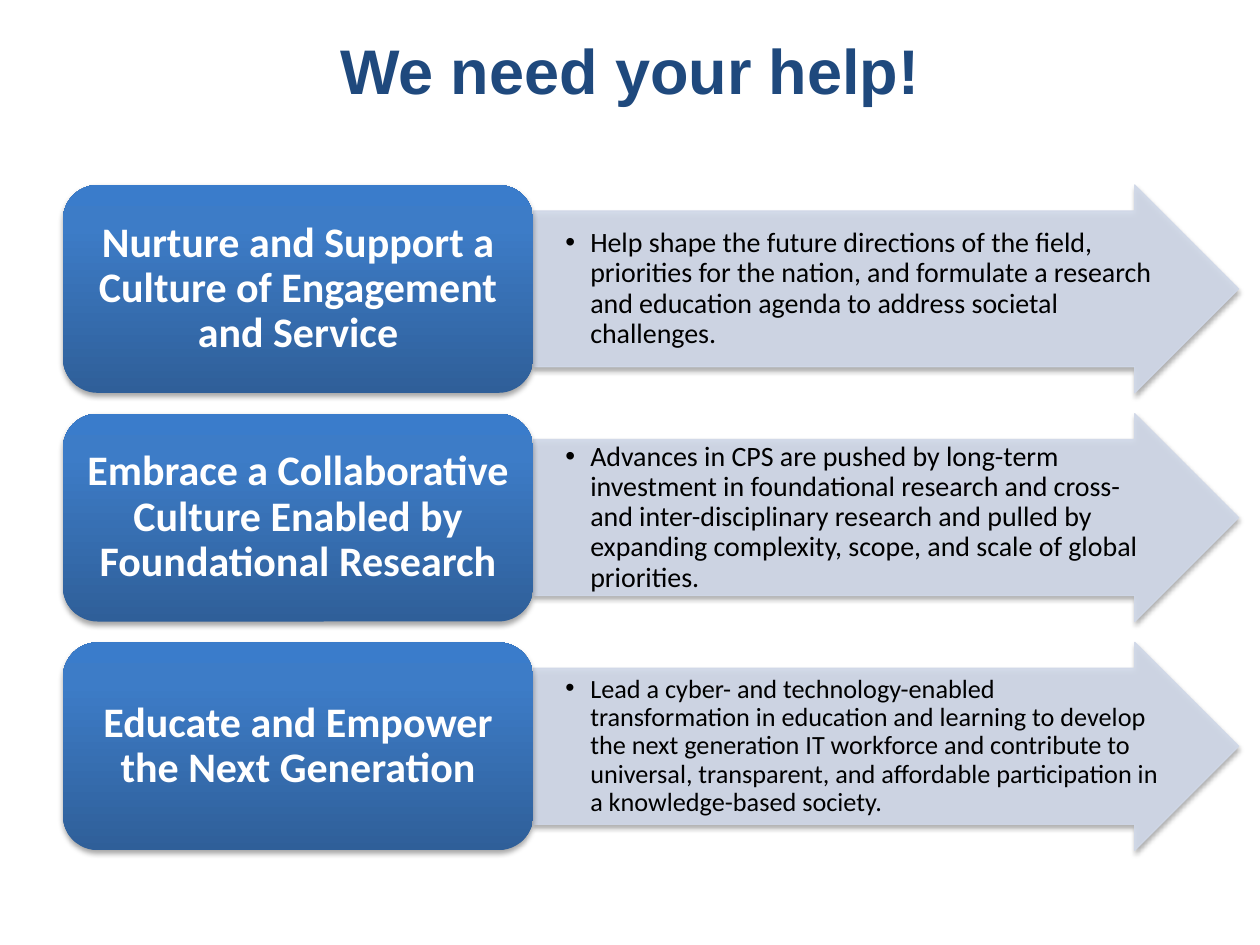
from copy import deepcopy

from pptx import Presentation
from pptx.dml.color import RGBColor
from pptx.enum.shapes import MSO_SHAPE
from pptx.enum.text import MSO_ANCHOR, PP_ALIGN
from pptx.oxml import parse_xml
from pptx.oxml.ns import nsdecls, qn
from pptx.util import Cm, Pt

NAVY = RGBColor(0x1F, 0x49, 0x7D)
PALE = RGBColor(0xD0, 0xD8, 0xE8)
WHITE = RGBColor(0xFF, 0xFF, 0xFF)
BLACK = RGBColor(0x00, 0x00, 0x00)
BLUE_STOPS = [
    (0, RGBColor(0x2F, 0x5F, 0x99)),
    (0.8, RGBColor(0x3D, 0x7C, 0xC7)),
    (1, RGBColor(0x3A, 0x7C, 0xCB)),
]

TITLE_FONT = {"name": "Arial", "size": Pt(36), "bold": True}
GOAL_FONT = {"name": "Calibri", "size": Pt(24), "bold": True}
DETAIL_FONT = {"name": "Calibri", "bold": False}

# Goal, detail, detail size in points
ROWS = [
    ("Nurture and Support a Culture of Engagement and Service",
     "Help shape the future directions of the field, priorities for the nation, "
     "and formulate a research and education agenda to address societal challenges.", 16),
    ("Embrace a Collaborative Culture Enabled by Foundational Research",
     "Advances in CPS are pushed by long-term investment in foundational research "
     "and cross- and inter-disciplinary research and pulled by expanding complexity, "
     "scope, and scale of global priorities.", 16),
    ("Educate and Empower the Next Generation",
     "Lead a cyber- and technology-enabled transformation in education and learning "
     "to develop the next generation IT workforce and contribute to universal, "
     "transparent, and affordable participation in a knowledge-based society.", 15),
]


def write(sp, text, color, font, align, spacing=1.0):
    tf = sp.text_frame
    tf.word_wrap = True
    tf.vertical_anchor = MSO_ANCHOR.MIDDLE
    p = tf.paragraphs[0]
    p.alignment = align
    p.line_spacing = spacing
    r = p.add_run()
    r.text = text
    for key, value in font.items():
        setattr(r.font, key, value)
    r.font.color.rgb = color
    return p


def add_shadow(sp):
    sp.shadow.inherit = False
    effects = sp._element.spPr.find(qn("a:effectLst"))
    effects.append(parse_xml(
        f'<a:outerShdw {nsdecls("a")} blurRad="{Pt(3.1)}" dist="{Pt(1.8)}" '
        'dir="5400000" rotWithShape="0"><a:srgbClr val="000000">'
        '<a:alpha val="35000"/></a:srgbClr></a:outerShdw>'))


def add_title(s, left, top, width, height):
    sp = s.shapes.add_textbox(left, top, width, height)
    write(sp, "We need your help!", NAVY, TITLE_FONT, PP_ALIGN.CENTER)


def add_arrow(s, left, top, width, height, text, size):
    sp = s.shapes.add_shape(MSO_SHAPE.RIGHT_ARROW, left, top, width, height)
    sp.adjustments[0] = 0.75
    sp.fill.solid()
    sp.fill.fore_color.rgb = PALE
    sp.line.color.rgb = PALE
    sp.line.width = Pt(0.75)
    # 90 % opacity on fill and outline
    for clr in sp._element.spPr.iter(qn("a:srgbClr")):
        clr.append(parse_xml(f'<a:alpha {nsdecls("a")} val="90000"/>'))
    add_shadow(sp)

    for side in ("left", "top", "right", "bottom"):
        setattr(sp.text_frame, f"margin_{side}", Cm(0.03))
    p = write(sp, text, BLACK, {**DETAIL_FONT, "size": Pt(size)}, PP_ALIGN.LEFT, 0.9)
    pPr = p._p.get_or_add_pPr()
    pPr.set("marL", str(Cm(1.12)))
    pPr.set("indent", str(Cm(-0.5)))
    pPr.append(parse_xml(f'<a:buFont {nsdecls("a")} typeface="Arial"/>'))
    pPr.append(parse_xml(f'<a:buChar {nsdecls("a")} char="•"/>'))


def add_goal(s, left, top, width, height, text):
    sp = s.shapes.add_shape(MSO_SHAPE.ROUNDED_RECTANGLE, left, top, width, height)
    sp.fill.gradient()
    sp.fill.gradient_angle = 90
    stops = sp._element.spPr.find(".//" + qn("a:gsLst"))
    stops.append(deepcopy(stops[0]))
    for stop, (position, color) in zip(sp.fill.gradient_stops, BLUE_STOPS):
        stop.position = position
        stop.color.rgb = color
    sp.line.fill.background()
    add_shadow(sp)
    write(sp, text, WHITE, GOAL_FONT, PP_ALIGN.CENTER, 0.9)


def add_goal_list(s, left, top, width, height):
    gap = Cm(0.42)
    row_height = (height - gap * (len(ROWS) - 1)) // len(ROWS)
    goal_width = int(width * 0.4)
    for i, (goal, detail, size) in enumerate(ROWS):
        y = top + i * (row_height + gap)
        add_arrow(s, left + goal_width, y, width - goal_width, row_height, detail, size)
        add_goal(s, left, y, goal_width, row_height, goal)


def main():
    prs = Presentation()
    prs.slide_width, prs.slide_height = Cm(25.4), Cm(19.05)
    s = prs.slides.add_slide(prs.slide_layouts[6])
    add_title(s, Cm(1.27), Cm(-0.2), Cm(22.86), Cm(3.18))
    add_goal_list(s, Cm(1.27), Cm(3.73), Cm(23.7), Cm(13.41))
    prs.save("out.pptx")


if __name__ == "__main__":
    main()
